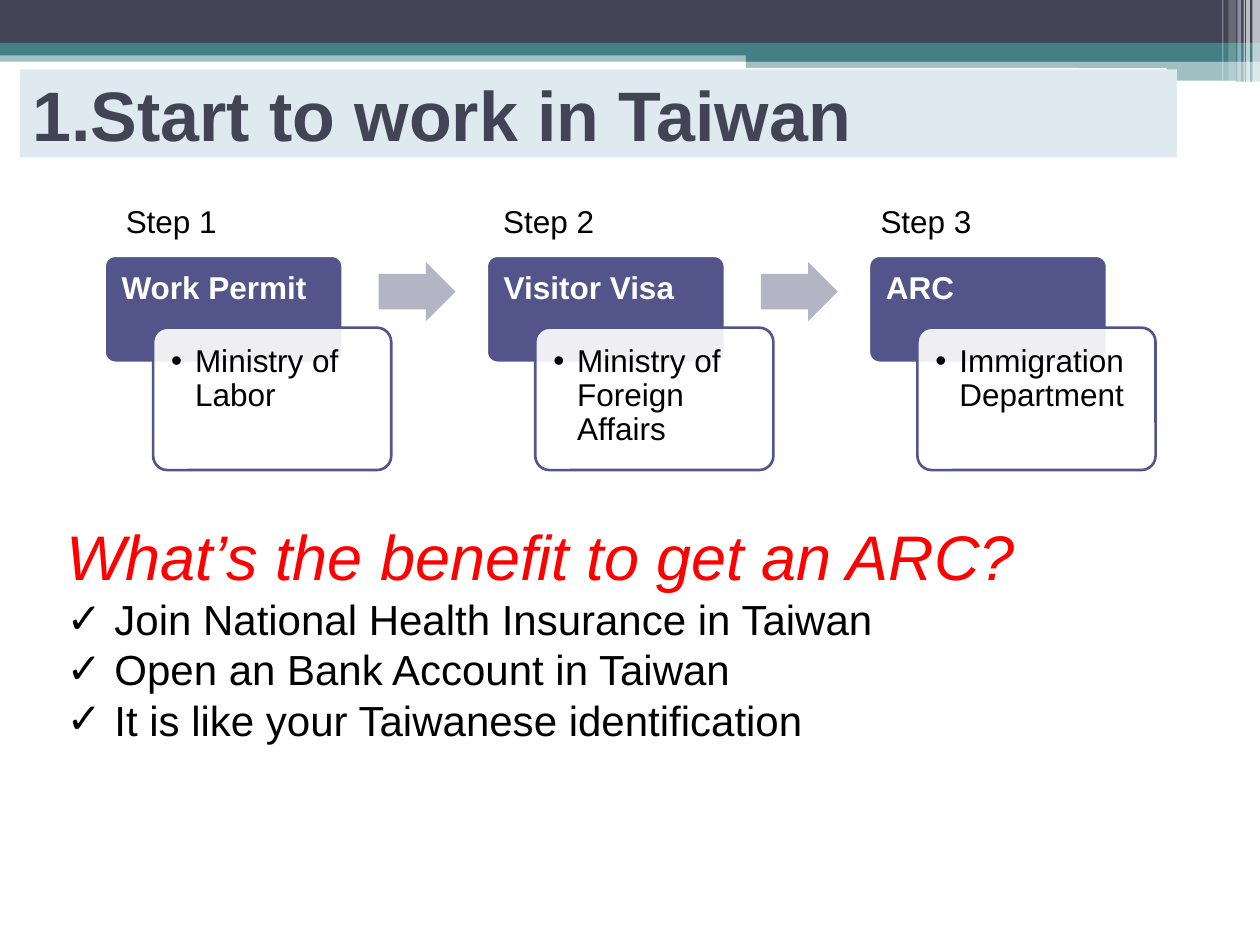
from lxml.etree import SubElement
from pptx import Presentation
from pptx.dml.color import RGBColor as RGB
from pptx.enum.shapes import MSO_SHAPE as SHAPE
from pptx.enum.text import MSO_ANCHOR as ANCHOR, PP_ALIGN as ALIGN
from pptx.oxml.ns import qn
from pptx.util import Inches, Pt

C = {"navy": "424456", "teal": "438086", "white": "FFFFFF", "pale": "DEE9F0",
     "indigo": "53548A", "arrow": "B3B4C4", "black": "000000", "red": "FF0000"}

prs = Presentation()
prs.slide_width, prs.slide_height = Inches(10), Inches(7.5)
COL, ROW = prs.slide_width / 100, prs.slide_height / 100
slide = prs.slides.add_slide(prs.slide_layouts[6])


def box(x, y, w, h, fill=None, alpha=100, kind=SHAPE.RECTANGLE, adj=(), line=None):
    sp = slide.shapes.add_shape(kind, int(x * COL), int(y * ROW), int(w * COL), int(h * ROW))
    sp.shadow.inherit = False
    for i, value in enumerate(adj):
        sp.adjustments[i] = value
    if fill:
        sp.fill.solid()
        sp.fill.fore_color.rgb = RGB.from_string(C[fill])
        if alpha < 100:
            color = sp.fill._xPr.find(qn("a:solidFill"))[0]
            SubElement(color, qn("a:alpha"), val=str(alpha * 1000))
    if line:
        sp.line.color.rgb = RGB.from_string(C[line])
        sp.line.width = Pt(1.5)
    else:
        sp.line.fill.background()
    return sp


def write(sp, text, size=18, color="black", bold=False, italic=False,
          anchor=ANCHOR.TOP, inset=None, spacing=None, bullet=None, indent=0):
    tf = sp.text_frame
    tf.word_wrap = True
    tf.vertical_anchor = anchor
    if inset:
        tf.margin_left, tf.margin_top, tf.margin_right, tf.margin_bottom = [Inches(inset)] * 4
    p = tf.add_paragraph() if tf.text else tf.paragraphs[0]
    p.alignment = ALIGN.LEFT
    if spacing:
        p.line_spacing = spacing
    if bullet:
        pPr = p._p.get_or_add_pPr()
        pPr.set("marL", str(Inches(indent)))
        pPr.set("indent", str(-Inches(indent)))
        SubElement(pPr, qn("a:buFont"), typeface="Arial")
        SubElement(pPr, qn("a:buChar"), char=bullet)
    r = p.add_run()
    r.text = text
    r.font.name, r.font.size = "Arial", Pt(size)
    r.font.bold, r.font.italic = bold, italic
    r.font.color.rgb = RGB.from_string(C[color])


for x, y, w, h, fill, alpha in [
    (0, 5.33, 100, 1.2, "teal", 50),
    (0, 0, 100, 4.53, "navy", 100),
    (0, 4.53, 100, 1.33, "teal", 100),
    (59.2, 5.2, 40.8, 1.33, "teal", 100),
    (59.2, 6.45, 40.8, 2.2, "teal", 50),
]:
    box(x, y, w, h, fill, alpha)

for x, y, w, h in [(59.1, 7.2, 33.5, 0.4), (80.6, 8.53, 17.5, 0.53)]:
    box(x, y, w, h, "white", kind=SHAPE.ROUNDED_RECTANGLE)

for x, w, h, alpha in [(99.4, 0.6, 9.07, 65), (98.9, 0.3, 9.07, 65), (98.7, 0.1, 9.07, 60),
                       (98.2, 0.3, 9.07, 40), (97.5, 0.6, 8.53, 20), (97, 0.1, 8.53, 30)]:
    box(x, 0, w, h, "white", alpha)

title = box(1.6, 7.33, 91.8, 9.33, "pale")
write(title, "1.Start to work in Taiwan", size=40, color="navy", bold=True, anchor=ANCHOR.MIDDLE)

steps = [("Work Permit", "Ministry of Labor"),
         ("Visitor Visa", "Ministry of Foreign Affairs"),
         ("ARC", "Immigration Department")]
PITCH, LABEL_PITCH = 30.33, 29.95
for i, (name, office) in enumerate(steps):
    x = 8.3 + i * PITCH
    head = box(x, 27.07, 18.9, 11.33, "indigo", kind=SHAPE.ROUNDED_RECTANGLE,
               adj=[0.1], line="white")
    write(head, name, color="white", bold=True, inset=0.11, spacing=0.9)
    body = box(x + 3.85, 34.67, 18.9, 15.07, "white", 90, SHAPE.ROUNDED_RECTANGLE,
               adj=[0.1], line="indigo")
    write(body, office, inset=0.11, spacing=0.9, bullet="•", indent=0.19)
    if i < len(steps) - 1:
        box(x + 21.75, 27.73, 6.1, 6.27, "arrow", kind=SHAPE.RIGHT_ARROW, adj=[0.6, 0.5])
    label = slide.shapes.add_textbox(int((9 + i * LABEL_PITCH) * COL), int(20.67 * ROW),
                                     int(15 * COL), int(5.33 * ROW))
    write(label, f"Step {i + 1}")

benefits = slide.shapes.add_textbox(int(4.3 * COL), int(54.13 * ROW),
                                    int(87.4 * COL), int(33.6 * ROW))
write(benefits, "What’s the benefit to get an ARC?", size=36, color="red", italic=True)
for text in ["Join National Health Insurance in Taiwan",
             "Open an Bank Account in Taiwan",
             "It is like your Taiwanese identification"]:
    write(benefits, text, size=24, bullet="✓", indent=0.38)

prs.save("out.pptx")
